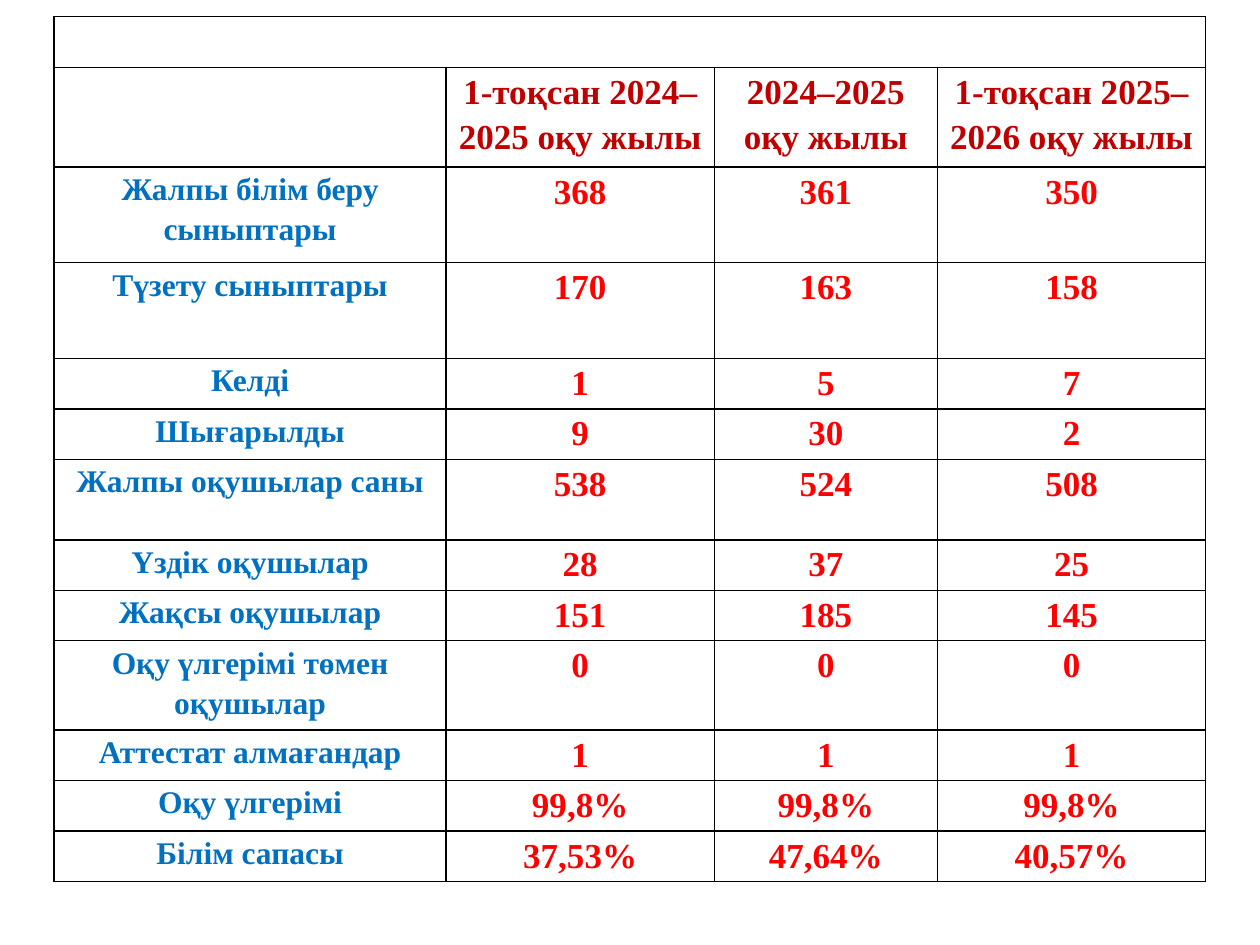
from dataclasses import dataclass

from lxml.etree import SubElement
from pptx import Presentation
from pptx.dml.color import RGBColor as Color
from pptx.enum.text import PP_ALIGN as Align
from pptx.oxml.ns import qn
from pptx.util import Inches, Pt

COLUMN_SPANS = [31.1, 21.3, 17.7, 21.3]
ROW_SPANS = [4, 7.9, 7.6, 7.6, 4, 4, 6.4, 4, 4, 7.1, 4, 4, 4]
PERIODS = ["", "1-тоқсан 2024–2025 оқу жылы", "2024–2025 оқу жылы", "1-тоқсан 2025–2026 оқу жылы"]
RESULTS = [
    ["Жалпы білім беру сыныптары", "368", "361", "350"],
    ["Түзету сыныптары", "170", "163", "158"],
    ["Келді", "1", "5", "7"],
    ["Шығарылды", "9", "30", "2"],
    ["Жалпы оқушылар саны", "538", "524", "508"],
    ["Үздік оқушылар", "28", "37", "25"],
    ["Жақсы оқушылар", "151", "185", "145"],
    ["Оқу үлгерімі төмен оқушылар", "0", "0", "0"],
    ["Аттестат алмағандар", "1", "1", "1"],
    ["Оқу үлгерімі", "99,8%", "99,8%", "99,8%"],
    ["Білім сапасы", "37,53%", "47,64%", "40,57%"],
]


@dataclass(frozen=True)
class Theme:
    font: str = "Times New Roman"
    heading: str = "C00000"
    label: str = "0070C0"
    value: str = "FF0000"
    border: str = "000000"
    border_width: float = 1
    label_size: int = 18
    value_size: int = 20
    line_spacing: float = 1.15
    side_margin: float = 0.7


class SlideBuilder:
    """Draws elements on a slide divided into 100 columns and 75 rows."""

    def __init__(self, presentation, theme):
        self.theme = theme
        self.column = presentation.slide_width / 100
        self.row = presentation.slide_height / 75
        self.slide = presentation.slides.add_slide(presentation.slide_layouts[6])

    def across(self, columns):
        return round(columns * self.column)

    def down(self, rows):
        return round(rows * self.row)

    def table(self, left, top, column_spans, row_spans):
        shape = self.slide.shapes.add_table(
            len(row_spans), len(column_spans), self.across(left), self.down(top),
            self.across(sum(column_spans)), self.down(sum(row_spans)))
        table = shape.table
        table.first_row = table.horz_banding = False
        for column, span in zip(table.columns, column_spans):
            column.width = self.across(span)
        for row, span in zip(table.rows, row_spans):
            row.height = self.down(span)
        for cell in table.iter_cells():
            self.borders(cell)
            cell.fill.background()
        return table

    def borders(self, cell):
        properties = cell._tc.get_or_add_tcPr()
        for side in ("a:lnL", "a:lnR", "a:lnT", "a:lnB"):
            line = SubElement(properties, qn(side), w=str(Pt(self.theme.border_width)))
            fill = SubElement(line, qn("a:solidFill"))
            SubElement(fill, qn("a:srgbClr"), val=self.theme.border)

    def cell_text(self, cell, text, size, color):
        cell.margin_left = cell.margin_right = self.across(self.theme.side_margin)
        cell.margin_top = cell.margin_bottom = 0
        cell.text_frame.text = text
        paragraph = cell.text_frame.paragraphs[0]
        paragraph.alignment = Align.CENTER
        paragraph.line_spacing = self.theme.line_spacing
        for run in paragraph.runs:
            run.font.name = self.theme.font
            run.font.size = Pt(size)
            run.font.bold = True
            run.font.color.rgb = Color.from_string(color)

    def table_row(self, table, index, texts, label_style, value_style):
        for column, text in enumerate(texts):
            if text:
                style = value_style if column else label_style
                self.cell_text(table.cell(index, column), text, *style)


def main():
    presentation = Presentation()
    presentation.slide_width, presentation.slide_height = Inches(10), Inches(7.5)
    theme = Theme()
    builder = SlideBuilder(presentation, theme)
    table = builder.table(4.3, 1.3, COLUMN_SPANS, ROW_SPANS)
    table.cell(0, 0).merge(table.cell(0, len(COLUMN_SPANS) - 1))
    heading_style = (theme.value_size, theme.heading)
    label_style = (theme.label_size, theme.label)
    value_style = (theme.value_size, theme.value)
    builder.table_row(table, 1, PERIODS, heading_style, heading_style)
    for index, texts in enumerate(RESULTS, start=2):
        builder.table_row(table, index, texts, label_style, value_style)
    presentation.save("out.pptx")


if __name__ == "__main__":
    main()
